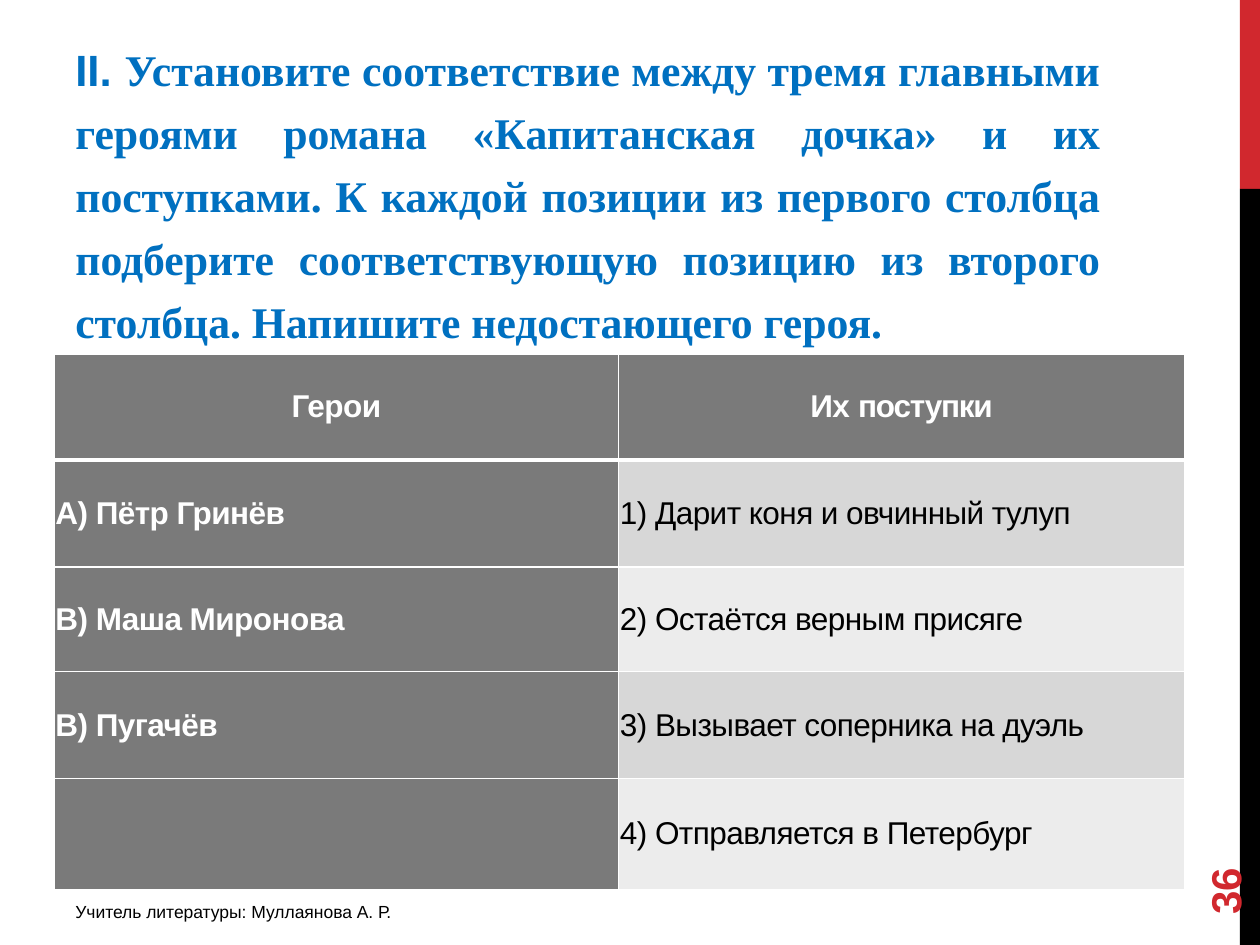
from lxml import etree
from pptx import Presentation
from pptx.dml.color import RGBColor
from pptx.enum.shapes import MSO_SHAPE
from pptx.enum.text import MSO_ANCHOR, PP_ALIGN
from pptx.oxml.ns import qn
from pptx.util import Inches, Pt

RECTANGLE = MSO_SHAPE.RECTANGLE
TOP, MIDDLE = MSO_ANCHOR.TOP, MSO_ANCHOR.MIDDLE
LEFT, CENTER, JUSTIFY = PP_ALIGN.LEFT, PP_ALIGN.CENTER, PP_ALIGN.JUSTIFY

COLORS = {
    "red": "D1282E", "black": "000000", "white": "FFFFFF", "blue": "0070C0",
    "header": "7A7A7A", "odd": "D7D7D7", "even": "ECECEC",
}


def color(name):
    return RGBColor.from_string(COLORS[name])


def add_run(paragraph, text, size=18, font="Arial", fill="black", bold=False, tracking=0):
    """Append a run; tracking is the letter spacing in points."""
    run = paragraph.add_run()
    run.text = text
    run.font.size = Pt(size)
    run.font.name = font
    run.font.bold = bold
    run.font.color.rgb = color(fill)
    if tracking:
        run._r.get_or_add_rPr().set("spc", str(round(tracking * 100)))


def set_borders(cell, widths):
    """Draw white borders; widths maps lnL, lnR, lnT, lnB to points."""
    properties = cell._tc.get_or_add_tcPr()
    for index, (side, width) in enumerate(widths.items()):
        line = etree.Element(qn("a:" + side), w=str(Pt(width)))
        solid = etree.SubElement(line, qn("a:solidFill"))
        etree.SubElement(solid, qn("a:srgbClr"), val=COLORS["white"])
        properties.insert(index, line)


class SlideBuilder:
    def __init__(self, slide):
        self.slide = slide

    def bar(self, left, top, width, height, fill):
        shape = self.slide.shapes.add_shape(
            RECTANGLE, Inches(left), Inches(top), Inches(width), Inches(height))
        shape.shadow.inherit = False
        shape.fill.solid()
        shape.fill.fore_color.rgb = color(fill)
        shape.line.fill.background()

    def text(self, left, top, width, height, runs, anchor=TOP, align=LEFT,
             line_spacing=None, rotation=0):
        """Add a one-paragraph box; runs is a list of (text, format) pairs."""
        box = self.slide.shapes.add_textbox(
            Inches(left), Inches(top), Inches(width), Inches(height))
        box.rotation = rotation
        frame = box.text_frame
        frame.word_wrap = True
        frame.vertical_anchor = anchor
        paragraph = frame.paragraphs[0]
        paragraph.alignment = align
        paragraph.line_spacing = line_spacing
        for text, style in runs:
            add_run(paragraph, text, **style)

    def cell(self, cell, runs, fill, align, bottom):
        cell.fill.solid()
        cell.fill.fore_color.rgb = color(fill)
        cell.vertical_anchor = MIDDLE
        cell.margin_left = cell.margin_right = Inches(0.01)
        cell.margin_top = cell.margin_bottom = 0
        paragraph = cell.text_frame.paragraphs[0]
        paragraph.alignment = align
        paragraph.space_before = Pt(3)
        for text, style in runs:
            add_run(paragraph, text, **style)
        set_borders(cell, {"lnL": 1, "lnR": 1, "lnT": 1, "lnB": bottom})

    def matching_table(self, left, top, columns, heights, header, rows):
        table = self.slide.shapes.add_table(
            len(heights), len(columns), Inches(left), Inches(top),
            Inches(sum(columns)), Inches(sum(heights))).table
        for column, width in zip(table.columns, columns):
            column.width = Inches(width)
        for row, height in zip(table.rows, heights):
            row.height = Inches(height)
        strong = {"fill": "white", "bold": True, "tracking": -0.3}
        for index, runs in enumerate(header):
            styled = [(text, {**strong, "tracking": tracking}) for text, tracking in runs]
            self.cell(table.cell(0, index), styled, "header", CENTER, 3)
        for index, (hero, action) in enumerate(rows, start=1):
            hero_runs = [(hero, strong)] if hero else []
            self.cell(table.cell(index, 0), hero_runs, "header", LEFT, 1)
            self.cell(table.cell(index, 1), [(action, {"tracking": -0.3})],
                      "odd" if index % 2 else "even", JUSTIFY, 1)


def main():
    presentation = Presentation()
    presentation.slide_width = Inches(10)
    presentation.slide_height = Inches(7.5)
    builder = SlideBuilder(presentation.slides.add_slide(presentation.slide_layouts[6]))

    builder.bar(9.84, 0, 0.16, 1.5, "red")
    builder.bar(9.84, 1.5, 0.16, 6, "black")

    task = {"size": 25, "fill": "blue", "bold": True}
    builder.text(0.5, 0.21, 8.33, 6.93, [
        ("II. ", task),
        ("Установите соответствие между тремя главными героями романа "
         "«Капитанская дочка» и их поступками. К каждой позиции из первого столбца "
         "подберите соответствующую позицию из второго столбца. "
         "Напишите недостающего героя.", {**task, "font": "Times New Roman"}),
    ], align=JUSTIFY, line_spacing=1.2)
    builder.text(0.5, 7.1, 3.75, 0.31,
                 [("Учитель литературы: Муллаянова А. Р.", {"size": 10})])
    builder.text(9, 6.44, 1.44, 0.4, [("36", {"size": 24, "fill": "red", "bold": True})],
                 anchor=MIDDLE, rotation=270)

    builder.matching_table(
        0.43, 2.81, [4.48, 4.49], [0.84, 0.85, 0.83, 0.85, 0.88],
        header=[[("Герои", -0.3)], [("Их ", -0.3), ("поступки", -0.7)]],
        rows=[
            ("А) Пётр Гринёв", "1) Дарит коня и овчинный тулуп"),
            ("В) Маша Миронова", "2) Остаётся верным присяге"),
            ("В) Пугачёв", "3) Вызывает соперника на дуэль"),
            ("", "4) Отправляется в Петербург"),
        ])
    presentation.save("out.pptx")


if __name__ == "__main__":
    main()
